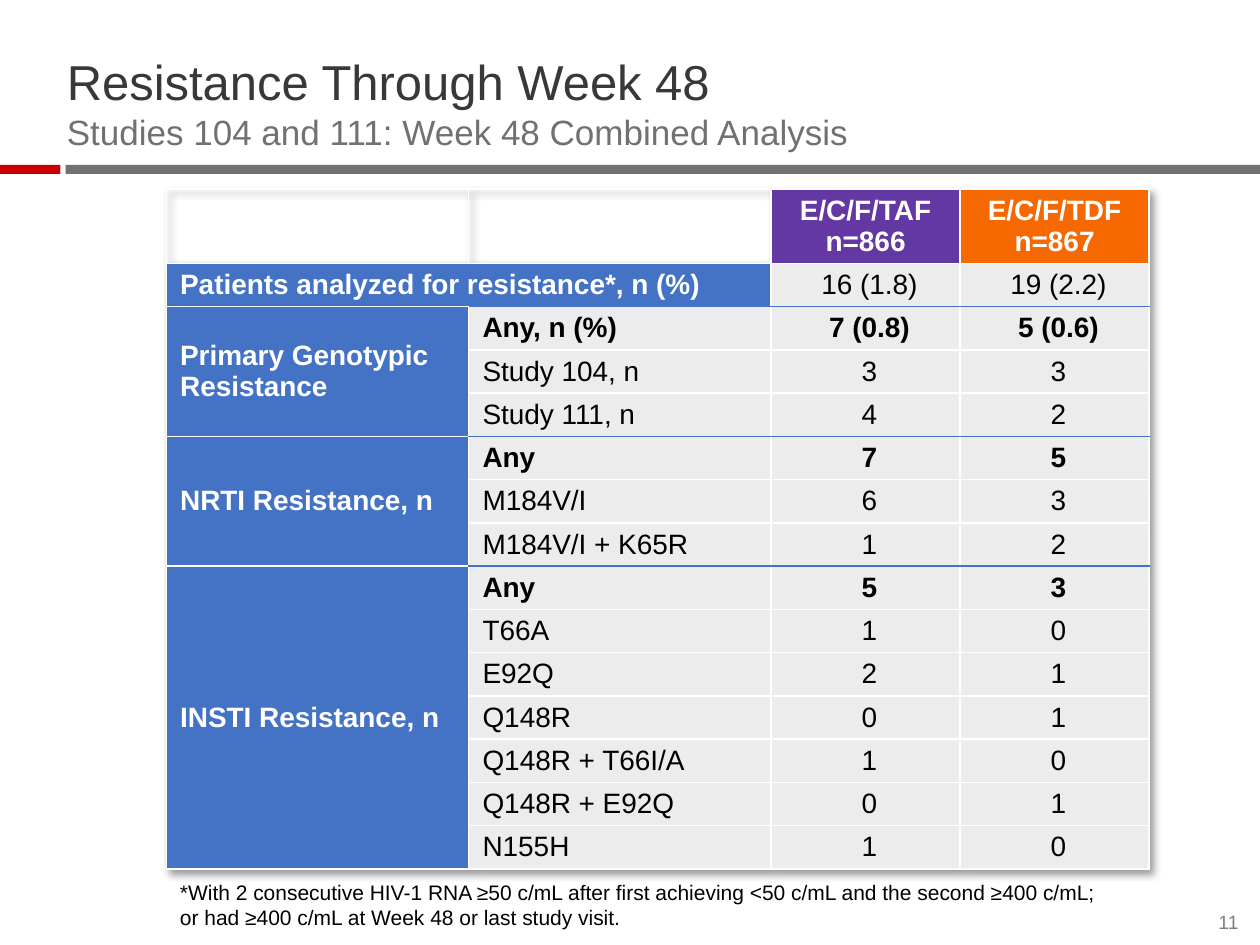
"""Build the Week 48 resistance slide with its results table."""
from lxml import etree
from pptx import Presentation
from pptx.dml.color import RGBColor
from pptx.enum import shapes, text
from pptx.oxml import parse_xml
from pptx.oxml.ns import nsdecls
from pptx.util import Inches, Pt

WHITE = RGBColor(0xFF, 0xFF, 0xFF)
BLACK = RGBColor(0, 0, 0)
DARK = RGBColor(0x38, 0x38, 0x38)
GRAY = RGBColor(0x71, 0x71, 0x71)
PAGE_GRAY = RGBColor(0x7F, 0x7F, 0x7F)
RED = RGBColor(0xCC, 0, 0)
PURPLE = RGBColor(0x63, 0x38, 0xA2)
ORANGE = RGBColor(0xF6, 0x69, 0)
BLUE = RGBColor(0x44, 0x72, 0xC4)
LIGHT = RGBColor(0xEC, 0xEC, 0xEC)

LEFT, CENTER, RIGHT = text.PP_ALIGN.LEFT, text.PP_ALIGN.CENTER, text.PP_ALIGN.RIGHT
MIDDLE, BOTTOM = text.MSO_ANCHOR.MIDDLE, text.MSO_ANCHOR.BOTTOM

ARMS = [("E/C/F/TAF", "n=866", PURPLE), ("E/C/F/TDF", "n=867", ORANGE)]
ANALYZED = ("Patients analyzed for resistance*, n (%)", "16 (1.8)", "19 (2.2)")
GROUPS = [
    ("Primary Genotypic Resistance", [
        ("Any, n (%)", "7 (0.8)", "5 (0.6)"),
        ("Study 104, n", "3", "3"),
        ("Study 111, n", "4", "2"),
    ]),
    ("NRTI Resistance, n", [
        ("Any", "7", "5"),
        ("M184V/I", "6", "3"),
        ("M184V/I + K65R", "1", "2"),
    ]),
    ("INSTI Resistance, n", [
        ("Any", "5", "3"),
        ("T66A", "1", "0"),
        ("E92Q", "2", "1"),
        ("Q148R", "0", "1"),
        ("Q148R + T66I/A", "1", "0"),
        ("Q148R + E92Q", "0", "1"),
        ("N155H", "1", "0"),
    ]),
]


def write(p, content, size=16, color=BLACK, bold=False, align=LEFT):
    """Append a formatted run to a paragraph."""
    p.alignment = align
    r = p.add_run()
    r.text = content
    r.font.name = "Arial"
    r.font.size = Pt(size)
    r.font.bold = bold
    r.font.color.rgb = color


def set_frame(tf, inset=0, anchor=text.MSO_ANCHOR.TOP):
    """Give a text frame equal insets, wrapping and an anchor."""
    tf.margin_left = tf.margin_right = tf.margin_top = tf.margin_bottom = Inches(inset)
    tf.word_wrap = True
    tf.auto_size = text.MSO_AUTO_SIZE.NONE
    tf.vertical_anchor = anchor


def add_bar(slide, left, width, color):
    """Add one piece of the rule under the title."""
    sp = slide.shapes.add_shape(shapes.MSO_SHAPE.RECTANGLE, Inches(left), Inches(1.31),
                                Inches(width), Inches(0.07))
    sp.shadow.inherit = False
    sp.fill.solid()
    sp.fill.fore_color.rgb = color
    sp.line.fill.background()


def add_title(slide):
    """Fill the title placeholder with title and subtitle."""
    sp = slide.shapes.title
    sp.left, sp.top, sp.width, sp.height = Inches(0.53), Inches(0.47), Inches(9), Inches(0.74)
    set_frame(sp.text_frame, anchor=BOTTOM)
    p = sp.text_frame.paragraphs[0]
    write(p, "Resistance Through Week 48", size=28, color=DARK)
    p.add_line_break()
    write(p, "Studies 104 and 111: Week 48 Combined Analysis", size=20, color=GRAY)


def add_text(slide, box, lines, inset=0, anchor=text.MSO_ANCHOR.TOP, **fmt):
    """Add a text box holding one paragraph of broken lines."""
    sp = slide.shapes.add_textbox(*map(Inches, box))
    set_frame(sp.text_frame, inset, anchor)
    p = sp.text_frame.paragraphs[0]
    for i, line in enumerate(lines):
        if i:
            p.add_line_break()
        write(p, line, **fmt)


def set_borders(cell, top=WHITE, bottom=WHITE):
    """Draw one-point borders around a cell."""
    tc_pr = cell._tc.get_or_add_tcPr()
    for side, color in (("L", WHITE), ("R", WHITE), ("T", top), ("B", bottom)):
        tc_pr.append(parse_xml(
            f'<a:ln{side} {nsdecls("a")} w="12700"><a:solidFill>'
            f'<a:srgbClr val="{color}"/></a:solidFill></a:ln{side}>'))


def fill_cell(cell, lines, fill, top=WHITE, bottom=WHITE, side=(0.11, 0.05), **fmt):
    """Write a cell, one paragraph a line, with its fill and borders."""
    set_borders(cell, top, bottom)
    cell.fill.solid()
    cell.fill.fore_color.rgb = fill
    cell.margin_left, cell.margin_right = map(Inches, side)
    cell.margin_top = cell.margin_bottom = Inches(0.01)
    cell.vertical_anchor = MIDDLE
    tf = cell.text_frame
    for i, line in enumerate(lines):
        write(tf.add_paragraph() if i else tf.paragraphs[0], line, **fmt)


def add_shadow(table):
    """Give the table a soft shadow to the lower right."""
    effects = parse_xml(
        f'<a:effectLst {nsdecls("a")}><a:outerShdw blurRad="50800" dist="38100" dir="2700000" '
        'algn="tl" rotWithShape="0"><a:srgbClr val="000000"><a:alpha val="40000"/>'
        '</a:srgbClr></a:outerShdw></a:effectLst>')
    table._tbl.tblPr.insert(0, effects)


def add_results(slide):
    """Add the resistance table."""
    count = 2 + sum(len(rows) for _, rows in GROUPS)
    table = slide.shapes.add_table(count, 4, Inches(1.32), Inches(1.5),
                                   Inches(7.8), Inches(5.4)).table
    table.first_row = table.horz_banding = False
    add_shadow(table)
    for col, width in zip(table.columns, (2.4, 2.4, 1.5, 1.5)):
        col.width = Inches(width)
    for i, row in enumerate(table.rows):
        row.height = Inches((5.4 - 0.59) / (count - 1) if i else 0.59)

    label = dict(fill=BLUE, color=WHITE, bold=True)
    for c in (0, 1):
        set_borders(table.cell(0, c))
        table.cell(0, c).fill.background()
    for c, (name, size, color) in enumerate(ARMS, 2):
        fill_cell(table.cell(0, c), (name, size), color, side=(0.1, 0.1),
                  color=WHITE, bold=True, align=CENTER)

    table.cell(1, 0).merge(table.cell(1, 1))
    fill_cell(table.cell(1, 0), ANALYZED[:1], **label)
    for c in (2, 3):
        fill_cell(table.cell(1, c), [ANALYZED[c - 1]], LIGHT, bottom=BLUE, align=CENTER)

    start = 2
    for name, rows in GROUPS:
        end = start + len(rows) - 1
        table.cell(start, 0).merge(table.cell(end, 0))
        fill_cell(table.cell(start, 0), [name], **label)
        for r, values in enumerate(rows, start):
            for c, value in enumerate(values, 1):
                fill_cell(table.cell(r, c), [value], LIGHT,
                          top=BLUE if r == start else WHITE,
                          bottom=BLUE if r == end < count - 1 else WHITE,
                          bold=r == start, align=LEFT if c == 1 else CENTER)
        start = end + 1


def main():
    """Build and save the slide."""
    prs = Presentation()
    prs.slide_width, prs.slide_height = Inches(10), Inches(7.5)
    slide = prs.slides.add_slide(prs.slide_layouts[5])
    add_bar(slide, 0.52, 9.48, GRAY)
    add_bar(slide, 0, 0.48, RED)
    add_title(slide)
    add_results(slide)
    add_text(slide, (1.33, 6.88, 7.83, 0.5), [
        "*With 2 consecutive HIV-1 RNA ≥50 c/mL after first achieving <50 c/mL "
        "and the second ≥400 c/mL;",
        "or had ≥400 c/mL at Week 48 or last study visit.",
    ], inset=0.1, size=12)
    add_text(slide, (9.56, 7.23, 0.27, 0.18), ["11"], anchor=BOTTOM,
             size=11, color=PAGE_GRAY, align=RIGHT)
    prs.save("out.pptx")


if __name__ == "__main__":
    main()
